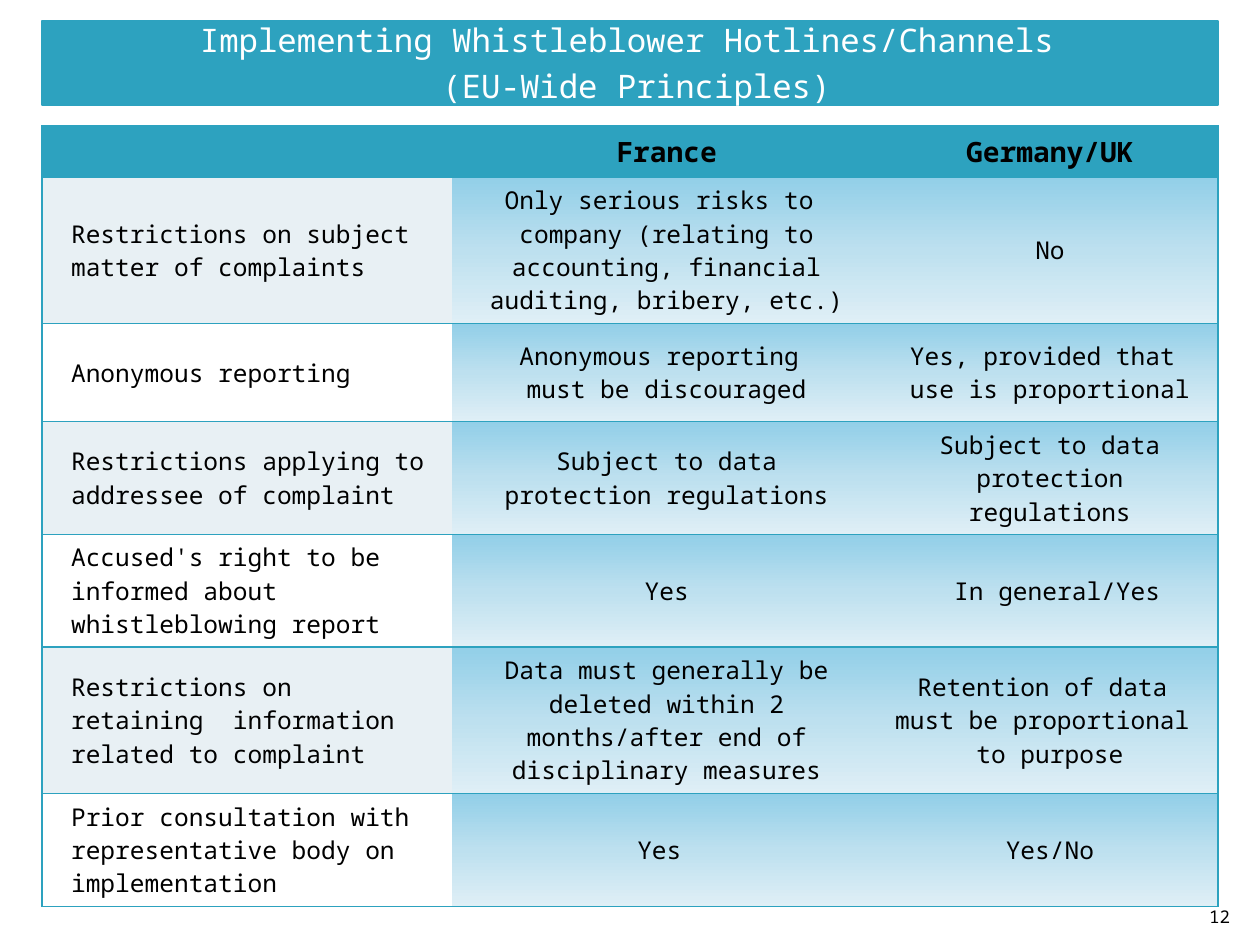
from lxml import etree
from pptx import Presentation
from pptx.dml.color import RGBColor
from pptx.enum.shapes import MSO_SHAPE
from pptx.enum.text import MSO_ANCHOR, PP_ALIGN
from pptx.oxml.ns import qn
from pptx.util import Pt

LEFT, CENTER, RIGHT = PP_ALIGN.LEFT, PP_ALIGN.CENTER, PP_ALIGN.RIGHT
MIDDLE, BOTTOM = MSO_ANCHOR.MIDDLE, MSO_ANCHOR.BOTTOM
FONT = "Noto Sans Mono"
COLORS = {
    "teal": "2DA2BF",
    "white": "FFFFFF",
    "black": "000000",
    "band": "E8F0F4",
}
ANSWER_GRADIENT = [(0, "92CFE8"), (50, "BDE0EF"), (100, "DFEFF6")]

COLUMN_WIDTHS = [234, 246, 192]
ROW_HEIGHTS = [29.2, 83.6, 56.2, 64.4, 64.4, 83.8, 64.4]
HEADINGS = ["", "France", "Germany/UK"]
# Each line break inside a cell starts a new paragraph
COMPARISON = [
    ["Restrictions on subject\nmatter of complaints",
     "Only serious risks to \ncompany (relating to accounting, financial "
     "auditing, bribery, etc.)",
     "No"],
    ["Anonymous reporting",
     "Anonymous reporting \nmust be discouraged",
     "Yes, provided that \nuse is proportional"],
    ["Restrictions applying to\naddressee of complaint",
     "Subject to data\nprotection regulations",
     "Subject to data protection regulations"],
    ["Accused's right to be informed about whistleblowing report",
     "Yes",
     " In general/Yes"],
    ["Restrictions on retaining  information related to complaint",
     "Data must generally be deleted within 2 months/after end of "
     "disciplinary measures",
     "Retention of data \nmust be proportional \nto purpose"],
    ["Prior consultation with representative body on implementation",
     "Yes ",
     "Yes/No"],
]


def rgb(name):
    return RGBColor.from_string(COLORS[name])


def write_text(frame, text, size=14, color="black", bold=False, align=LEFT,
               space_between=0, indent=0):
    """Fill a text frame, one paragraph for each line of text."""
    frame.word_wrap = True
    for index, line in enumerate(text.split("\n")):
        paragraph = frame.paragraphs[0] if index == 0 else frame.add_paragraph()
        paragraph.alignment = align
        if index:
            paragraph.space_before = Pt(space_between)
        if indent:
            properties = paragraph._p.get_or_add_pPr()
            properties.set("marL", str(Pt(indent)))
            properties.set("indent", "0")
        font = paragraph.font
        if line:
            run = paragraph.add_run()
            run.text = line
            font = run.font
        font.name = FONT
        font.size = Pt(size)
        font.bold = bold
        font.color.rgb = rgb(color)


def add_color(parent, value):
    etree.SubElement(parent, qn("a:srgbClr"), val=value)


def set_borders(cell, colors_by_side):
    """Draw 1 pt borders; a side with no colour is left blank."""
    properties = cell._tc.get_or_add_tcPr()
    for side in ("L", "R", "T", "B"):
        line = etree.SubElement(properties, qn(f"a:ln{side}"), w=str(Pt(1)))
        color = colors_by_side.get(side)
        if color:
            add_color(etree.SubElement(line, qn("a:solidFill")), COLORS[color])
        else:
            etree.SubElement(line, qn("a:noFill"))


def set_gradient(cell, stops):
    """Fill a cell from top to bottom."""
    gradient = etree.SubElement(cell._tc.get_or_add_tcPr(), qn("a:gradFill"))
    stop_list = etree.SubElement(gradient, qn("a:gsLst"))
    for percent, value in stops:
        stop = etree.SubElement(stop_list, qn("a:gs"), pos=str(percent * 1000))
        add_color(stop, value)
    etree.SubElement(gradient, qn("a:lin"), ang="5400000", scaled="0")


def add_title(slide, left, top, width, height):
    shape = slide.shapes.add_shape(
        MSO_SHAPE.RECTANGLE, Pt(left), Pt(top), Pt(width), Pt(height))
    shape.shadow.inherit = False
    shape.fill.solid()
    shape.fill.fore_color.rgb = rgb("teal")
    shape.line.color.rgb = rgb("teal")
    shape.line.width = Pt(0.75)
    frame = shape.text_frame
    frame.vertical_anchor = MIDDLE
    frame.margin_left = Pt(14.4)
    write_text(frame, "Implementing Whistleblower Hotlines/Channels \n"
               "(EU-Wide Principles)", size=18.5, color="white",
               align=CENTER, space_between=4)


def add_comparison_table(slide, left, top, width, height):
    rows = [HEADINGS] + COMPARISON
    table = slide.shapes.add_table(
        len(rows), len(HEADINGS), Pt(left), Pt(top), Pt(width), Pt(height)).table
    table.first_row = table.horz_banding = False
    for column, column_width in zip(table.columns, COLUMN_WIDTHS):
        column.width = Pt(column_width)
    for row, row_height in zip(table.rows, ROW_HEIGHTS):
        row.height = Pt(row_height)

    last_column = len(HEADINGS) - 1
    for row_index, texts in enumerate(rows):
        for column_index, text in enumerate(texts):
            cell = table.cell(row_index, column_index)
            cell.vertical_anchor = MIDDLE
            is_heading, is_topic = row_index == 0, column_index == 0

            # Rules between rows, and an outer frame
            borders = {"T": "teal", "B": "teal"}
            if is_topic:
                borders["L"] = "teal"
            if column_index == last_column:
                borders["R"] = "teal"
            set_borders(cell, borders)

            # Teal heading, banded topics, gradient answers
            if is_heading or is_topic:
                band = "band" if row_index % 2 else "white"
                cell.fill.solid()
                cell.fill.fore_color.rgb = rgb("teal" if is_heading else band)
            else:
                set_gradient(cell, ANSWER_GRADIENT)

            write_text(cell.text_frame, text, size=16 if is_heading else 14,
                       bold=is_heading, align=LEFT if is_topic else CENTER,
                       indent=9.4 if is_topic else 0)


def add_page_number(slide, left, top, width, height):
    box = slide.shapes.add_textbox(Pt(left), Pt(top), Pt(width), Pt(height))
    box.text_frame.vertical_anchor = BOTTOM
    write_text(box.text_frame, "12", size=10, align=RIGHT)


def main():
    presentation = Presentation()
    presentation.slide_width, presentation.slide_height = Pt(720), Pt(540)
    slide = presentation.slides.add_slide(presentation.slide_layouts[6])
    add_title(slide, 24, 12, 672, 48)
    add_page_number(slide, 681, 504.5, 29, 29)
    add_comparison_table(slide, 24, 72, sum(COLUMN_WIDTHS), sum(ROW_HEIGHTS))
    presentation.save("out.pptx")


if __name__ == "__main__":
    main()
